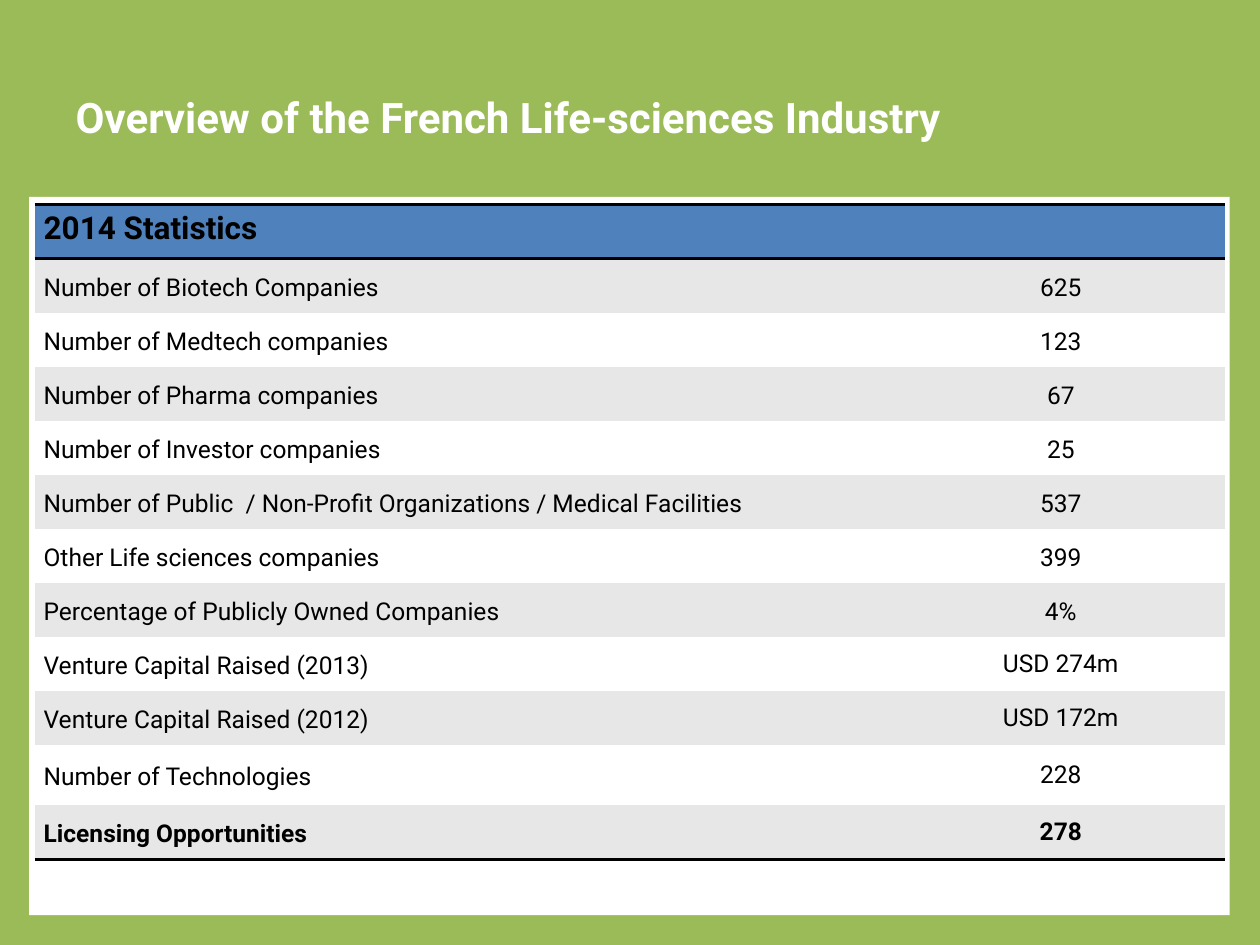
from lxml.etree import SubElement
from pptx import Presentation
from pptx.dml.color import RGBColor
from pptx.enum.shapes import MSO_SHAPE
from pptx.enum.text import MSO_ANCHOR, PP_ALIGN
from pptx.oxml.ns import qn
from pptx.util import Cm, Pt

FONT = "Roboto"
PLAIN = "{2D5ABB26-0587-4C30-8999-92F81FD0307C}"
COLORS = {"green": "9BBB59", "white": "FFFFFF", "blue": "4F81BD",
          "grey": "E7E7E7", "black": "000000"}
STATS = [
    ("Number of Biotech Companies", "625"),
    ("Number of Medtech companies", "123"),
    ("Number of Pharma companies", "67"),
    ("Number of Investor companies", "25"),
    ("Number of Public  / Non-Profit Organizations / Medical Facilities", "537"),
    ("Other Life sciences companies", "399"),
    ("Percentage of Publicly Owned Companies", "4%"),
    ("Venture Capital Raised (2013)", "USD 274m"),
    ("Venture Capital Raised (2012)", "USD 172m"),
    ("Number of Technologies", "228"),
    ("Licensing Opportunities", "278"),
]


def write(frame, text, size, color, bold, align=PP_ALIGN.LEFT, space=None):
    par = frame.paragraphs[0]
    par.alignment = align
    par.line_spacing = space
    run = par.add_run()
    run.text = text
    run.font.name = FONT
    run.font.size = Pt(size)
    run.font.bold = bold
    run.font.color.rgb = RGBColor.from_string(COLORS[color])


def style(cell, color, edges=()):
    cell.margin_left = cell.margin_right = Cm(0.18)
    cell.margin_top = cell.margin_bottom = 0
    props = cell._tc.get_or_add_tcPr()
    for edge in edges:
        line = SubElement(props, qn("a:" + edge), w=str(Pt(2)))
        solid = SubElement(line, qn("a:solidFill"))
        SubElement(solid, qn("a:srgbClr"), val=COLORS["black"])
    cell.fill.solid()
    cell.fill.fore_color.rgb = RGBColor.from_string(COLORS[color])


deck = Presentation()
deck.slide_width, deck.slide_height = Cm(25.4), Cm(19.05)
slide = deck.slides.add_slide(deck.slide_layouts[5])
back = slide.background.fill
back.solid()
back.fore_color.rgb = RGBColor.from_string(COLORS["green"])

title = slide.shapes.title
title.left, title.top = Cm(1.27), Cm(0.76)
title.width, title.height = Cm(22.86), Cm(3.18)
title.text_frame.vertical_anchor = MSO_ANCHOR.MIDDLE
write(title.text_frame, "Overview of the French Life-sciences Industry", 24, "white", True)

panel = slide.shapes.add_shape(MSO_SHAPE.RECTANGLE, Cm(0.59), Cm(3.97), Cm(24.2), Cm(14.48))
panel.shadow.inherit = False
panel.fill.solid()
panel.fill.fore_color.rgb = RGBColor.from_string(COLORS["white"])
panel.line.fill.background()
title.element.addprevious(panel.element)

count = len(STATS)
frame = slide.shapes.add_table(count + 1, 2, Cm(0.7), Cm(4.12), Cm(24), Cm(13.2))
for node in frame.element.iter(qn("a:tableStyleId")):
    node.text = PLAIN
table = frame.table
table.columns[0].width, table.columns[1].width = Cm(17.37), Cm(6.63)
for row in table.rows:
    row.height = Cm(1.09)
table.rows[count - 1].height = Cm(1.21)

for cell in table.rows[0].cells:
    style(cell, "blue", ("lnT", "lnB"))
head = table.cell(0, 0)
head.merge(table.cell(0, 1))
write(head.text_frame, "2014 Statistics", 18, "black", True, space=1.15)

for num, stat in enumerate(STATS, 1):
    last = num == count
    for col, text in enumerate(stat):
        cell = table.cell(num, col)
        style(cell, "grey" if num % 2 else "white", ("lnB",) if last else ())
        cell.vertical_anchor = MSO_ANCHOR.MIDDLE
        align = PP_ALIGN.CENTER if col else PP_ALIGN.LEFT
        space = 1.0 if col and num > 7 else 1.15
        write(cell.text_frame, text, 14, "black", last, align, space)

deck.save("out.pptx")
